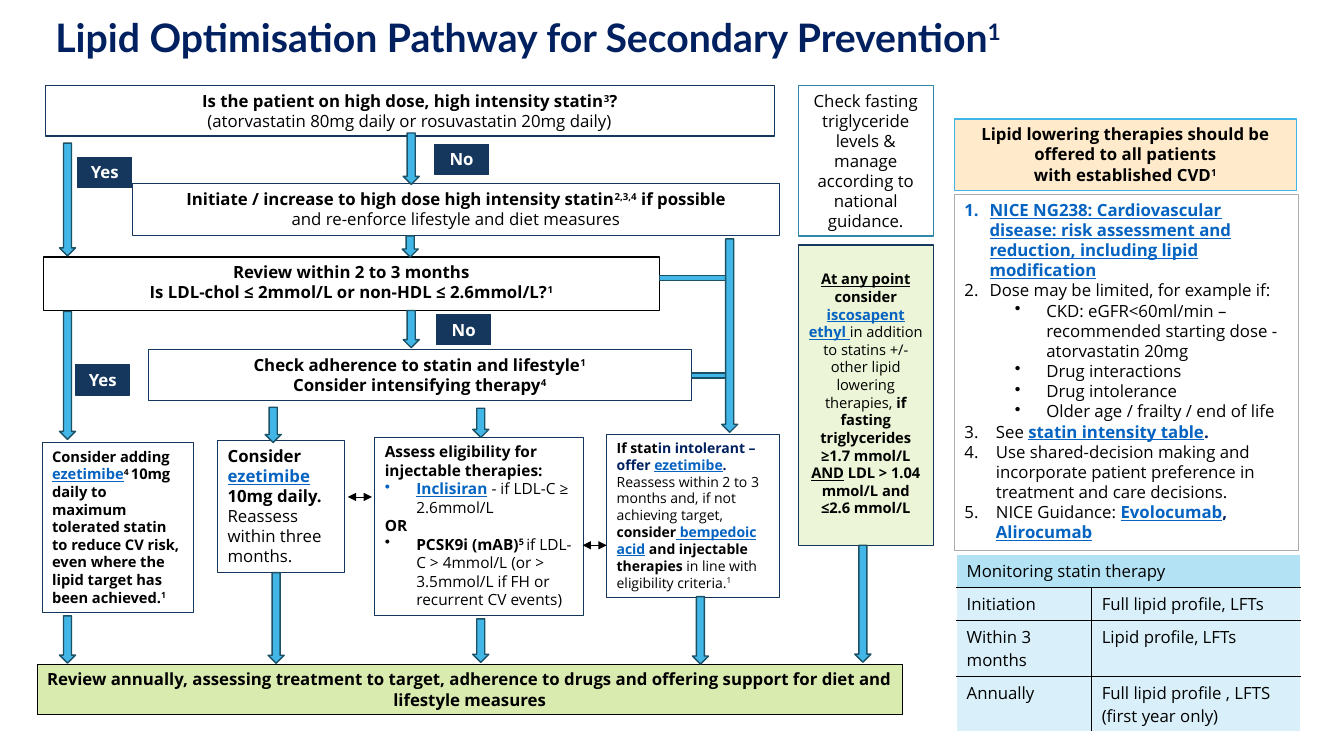
from lxml import etree
from pptx import Presentation
from pptx.dml.color import RGBColor
from pptx.enum import shapes, text
from pptx.oxml import ns
from pptx.util import Pt

NAVY = RGBColor(0x15, 0x37, 0x5D)
TITLE_NAVY = RGBColor(0x00, 0x20, 0x60)
LINK_BLUE = RGBColor(0x05, 0x63, 0xC1)
ARROW_BLUE = RGBColor(0x42, 0xB6, 0xE6)
ARROW_EDGE = RGBColor(0x1C, 0x50, 0x65)
CHECK_EDGE = RGBColor(0x30, 0x87, 0xAA)
CREAM = RGBColor(0xFF, 0xEB, 0xCC)
CREAM_EDGE = RGBColor(0x41, 0xB6, 0xE6)
LIME = RGBColor(0xA3, 0xCD, 0x38)
GREY = RGBColor(0xAF, 0xAB, 0xAB)
HEADER_BLUE = RGBColor(0xB3, 0xE2, 0xF5)
ROW_BLUE = RGBColor(0xD9, 0xF0, 0xFA)
BLACK = RGBColor(0, 0, 0)
WHITE = RGBColor(0xFF, 0xFF, 0xFF)

PLAIN = {"bold": False}
BOLD = {"bold": True}
STRONG = {"bold": True, "underline": True}
LINK = {**STRONG, "color": LINK_BLUE}
DARK = {**BOLD, "color": TITLE_NAVY}
LABEL = {**BOLD, "color": WHITE}
SUP = {**BOLD, "raised": True}
PLAIN_SUP = {**PLAIN, "raised": True}

DOT = ("a:buChar", "char", "•")
NUMBER = ("a:buAutoNum", "type", "arabicPeriod")
CENTER, LEFT = text.PP_ALIGN.CENTER, text.PP_ALIGN.LEFT
TOP, MIDDLE = text.MSO_ANCHOR.TOP, text.MSO_ANCHOR.MIDDLE
RECT = shapes.MSO_SHAPE.RECTANGLE
DOWN = shapes.MSO_SHAPE.DOWN_ARROW


def sub(parent, tag, **attributes):
    return etree.SubElement(parent, ns.qn(tag), **attributes)


def add_runs(paragraph, runs, size, font="Open Sans"):
    for words, style in runs:
        run = paragraph.add_run()
        run.text = words
        values = {"name": font, "size": Pt(size), **style}
        run.font.color.rgb = values.pop("color", BLACK)
        if values.pop("raised", False):
            run.font._element.set("baseline", "30000")
        for name, value in values.items():
            setattr(run.font, name, value)


def add_bullet(paragraph, bullet, indent, hanging, level=0):
    paragraph.level = level
    properties = paragraph._p.get_or_add_pPr()
    properties.set("marL", str(Pt(indent)))
    properties.set("indent", str(-Pt(hanging)))
    tag, attribute, value = bullet
    sub(properties, tag, **{attribute: value})


def add_block(slide, kind, place, fill=None, edge=None, width=0.75, opacity=None):
    block = slide.shapes.add_shape(kind, *map(Pt, place))
    block.shadow.inherit = False
    if fill is None:
        block.fill.background()
    else:
        block.fill.solid()
        block.fill.fore_color.rgb = fill
    if opacity:
        color = block._element.spPr.find(ns.qn("a:solidFill"))[0]
        sub(color, "a:alpha", val=str(opacity * 1000))
    if edge is None:
        block.line.fill.background()
    else:
        block.line.color.rgb = edge
        block.line.width = Pt(width)
    return block


def add_box(slide, place, paragraphs, size=12, align=CENTER, anchor=TOP,
            top=3.6, edge=NAVY, **look):
    """Each paragraph is a list of runs, or a pair of runs and bullet settings."""
    frame = add_block(slide, RECT, place, edge=edge, **look).text_frame
    frame.word_wrap = True
    frame.vertical_anchor = anchor
    frame.margin_top = Pt(top)
    for index, content in enumerate(paragraphs):
        runs, bullet = content if isinstance(content, tuple) else (content, None)
        paragraph = frame.add_paragraph() if index else frame.paragraphs[0]
        if bullet:
            add_bullet(paragraph, *bullet)
        paragraph.alignment = align
        add_runs(paragraph, runs, size)


def add_double_arrow(slide, left, right, y):
    line = slide.shapes.add_connector(
        shapes.MSO_CONNECTOR.STRAIGHT, Pt(left), Pt(y), Pt(right), Pt(y))
    line.line.color.rgb = BLACK
    line.line.width = Pt(0.5)
    outline = line.line._get_or_add_ln()
    for end in ("a:headEnd", "a:tailEnd"):
        sub(outline, end, type="triangle")
    sub(line._element.spPr, "a:effectLst")


def add_border(cell, side):
    border = sub(cell._tc.get_or_add_tcPr(), f"a:{side}", w=str(Pt(1)))
    sub(sub(border, "a:solidFill"), "a:srgbClr", val=str(BLACK))


def add_monitoring_table(slide):
    rows = [("Monitoring statin therapy", ""),
            ("Initiation", "Full lipid profile, LFTs"),
            ("Within 3 months", "Lipid profile, LFTs"),
            ("Annually", "Full lipid profile , LFTS (first year only)")]
    table = slide.shapes.add_table(4, 2, *map(Pt, (683.3, 396, 245.5, 115.2))).table
    for column, width in zip(table.columns, (96.5, 149)):
        column.width = Pt(width)
    for r, (row, height) in enumerate(zip(rows, (21.4, 21.4, 36.2, 36.2))):
        table.rows[r].height = Pt(height)
        for c, words in enumerate(row):
            cell = table.cell(r, c)
            if r and c:
                add_border(cell, "lnL")
            if r and not c:
                add_border(cell, "lnR")
            if r:
                add_border(cell, "lnT")
            if r < len(rows) - 1:
                add_border(cell, "lnB")
            cell.fill.solid()
            cell.fill.fore_color.rgb = ROW_BLUE if r else HEADER_BLUE
            if words:
                add_runs(cell.text_frame.paragraphs[0], [(words, PLAIN)], 12)
    table.cell(0, 0).merge(table.cell(0, 1))


def add_title(slide):
    title = slide.shapes.title
    place = {"left": 32.4, "top": 10.8, "width": 889.9, "height": 34.6}
    for name, value in place.items():
        setattr(title, name, Pt(value))
    title.text_frame.vertical_anchor = MIDDLE
    heading = title.text_frame.paragraphs[0]
    heading.alignment = LEFT
    heading.line_spacing = 0.9
    add_runs(heading, [("Lipid Optimisation\u00a0Pathway for Secondary Prevention".replace("\u00a0", " "), DARK),
                       ("1", {**DARK, "raised": True})], 28, "Lato")


def add_questions(slide):
    add_box(slide, (32.4, 61.2, 520.6, 36), [
        [("Is the patient on high dose, high intensity statin", BOLD), ("3", SUP), ("?", BOLD)],
        [("(atorvastatin 80mg daily or rosuvastatin 20mg daily)", PLAIN)]])
    add_box(slide, (95, 131, 461.5, 37.4), [
        [("Initiate / increase to high dose high intensity statin", BOLD), ("2,3,4", SUP),
         (" if possible", BOLD)],
        [("and re-enforce lifestyle and diet measures", PLAIN)]])
    add_box(slide, (31, 183.6, 440, 38.2), [
        [("Review within 2 to 3 months", BOLD)],
        [("Is LDL-chol ≤ 2mmol/L or non-HDL ≤ 2.6mmol/L?", BOLD), ("1", SUP)]],
        fill=WHITE, edge=BLACK)
    add_box(slide, (105.8, 249.8, 388.1, 36), [
        [("Check adherence to statin and lifestyle", BOLD), ("1", SUP)],
        [("Consider intensifying therapy", BOLD), ("4", SUP)]])
    for left, top, answer in ((310.3, 103, "No"), (311.8, 224.6, "No"),
                              (55.4, 112.3, "Yes"), (54, 260.6, "Yes")):
        add_box(slide, (left, top, 38.9, 21.6), [[(answer, LABEL)]], fill=NAVY)


def add_treatments(slide):
    add_box(slide, (30.2, 316.1, 108, 121.7), [
        [("Consider adding ", BOLD), ("ezetimibe", LINK), ("4 ", SUP),
         ("10mg daily to maximum tolerated statin to reduce CV risk, even where "
          "the lipid target has been achieved.", BOLD), ("1", SUP)]], 10.5, LEFT)
    add_box(slide, (155.5, 314.6, 90.7, 94.3), [
        [("Consider ", BOLD), ("ezetimibe", LINK), (" ", SUP), ("10mg daily.", BOLD)],
        [("Reassess within three months.", PLAIN)]], align=LEFT)
    bullet = (DOT, 22.5, 22.5)
    add_box(slide, (267.8, 312.5, 149, 127.4), [
        [("Assess eligibility for injectable therapies:", BOLD)],
        ([("Inclisiran", LINK), (" - if LDL-C ≥ 2.6mmol/L", PLAIN)], bullet),
        [("OR", BOLD)],
        ([("PCSK9i (mAB)", BOLD), ("5 ", SUP),
          ("if LDL-C > 4mmol/L (or > 3.5mmol/L if FH or recurrent CV events)", PLAIN)],
         bullet)], 11, LEFT)
    add_box(slide, (433.4, 310.3, 123.1, 116.6), [
        [("If stat", BOLD), ("in intolerant – offer ", DARK), ("ezetimibe", LINK), (". ", DARK),
         ("Reassess within 2 to 3 months and, if not achieving target, ", PLAIN),
         ("consider", BOLD), (" bempedoic acid", LINK), (" and injectable therapies ", BOLD),
         ("in line with eligibility criteria.", PLAIN), ("1", PLAIN_SUP)]], 10, LEFT)
    add_box(slide, (26.6, 474.5, 617.8, 36), [
        [("Review annually, assessing treatment to target, adherence to drugs and offering "
          "support for diet and lifestyle measures", BOLD)]],
        fill=LIME, opacity=40, edge=BLACK)


def add_triglycerides(slide):
    add_box(slide, (570.2, 61.2, 96.5, 107.3), [
        [("Check fasting triglyceride levels & manage according to national guidance.", PLAIN)]],
        anchor=MIDDLE, fill=WHITE, edge=CHECK_EDGE, width=1)
    add_box(slide, (570.2, 175, 96.5, 214.6), [
        [("At any point ", STRONG), ("consider ", BOLD), ("iscosapent ethyl ", LINK),
         ("in addition to statins +/- other lipid lowering therapies, ", PLAIN),
         ("if fasting", BOLD)],
        [("triglycerides ≥1.7 mmol/L ", BOLD), ("AND", STRONG),
         (" LDL > 1.04 mmol/L and ≤2.6 mmol/L", BOLD)]],
        10.5, top=18, fill=LIME, opacity=20)


def add_guidance(slide):
    add_box(slide, (681.8, 85, 244.1, 51.1), [
        [("Lipid lowering therapies should be offered to all patients", BOLD)],
        [("with established CVD", BOLD), ("1", SUP)]], fill=CREAM, edge=CREAM_EDGE)
    near, far, inner = (NUMBER, 18, 18), (NUMBER, 22.5, 22.5), (DOT, 58.5, 22.5, 1)
    limits = ("CKD: eGFR<60ml/min – recommended starting dose - atorvastatin 20mg",
              "Drug interactions", "Drug intolerance", "Older age / frailty / end of life")
    add_box(slide, (681.8, 139, 245.5, 254.2), [
        ([("NICE NG238: Cardiovascular disease: risk assessment and reduction, "
           "including lipid modification", LINK)], near),
        ([("Dose may be limited, for example if:", PLAIN)], near),
        *[([(limit, PLAIN)], inner) for limit in limits],
        ([("See ", PLAIN), ("statin intensity table", LINK), (".", DARK)], far),
        ([("Use shared-decision making and incorporate patient preference in treatment "
           "and care decisions.", PLAIN)], far),
        ([("NICE Guidance: ", PLAIN), ("Evolocumab", LINK), (", ", DARK),
          ("Alirocumab", LINK)], far)], align=LEFT, edge=GREY)


def add_flow(slide):
    for place in ((470.9, 196.6, 49.7, 3.6), (493.9, 266.4, 26.6, 3.6)):
        add_block(slide, RECT, place, ARROW_BLUE, ARROW_EDGE, 1)
    for left, top, height in (
            (288, 95, 36.7), (287.3, 168.5, 15.1), (337.7, 291.6, 20.9), (42.5, 102.2, 80.6),
            (42.5, 222.5, 91.4), (288, 221.8, 26.6), (189.4, 290.9, 25.2), (42.5, 439.9, 33.8),
            (337.7, 442.1, 31), (610.6, 389.5, 83.5), (515.5, 170.6, 138.2),
            (191.5, 409, 64.8), (494.6, 426.2, 48.2)):
        add_block(slide, DOWN, (left, top, 11.5, height), ARROW_BLUE, ARROW_EDGE, 1)
    add_double_arrow(slide, 416.2, 433.4, 389.5)
    add_double_arrow(slide, 248.4, 265.7, 355)


def main():
    deck = Presentation()
    deck.slide_width, deck.slide_height = Pt(960), Pt(540)
    slide = deck.slides.add_slide(deck.slide_layouts[5])
    for add_part in (add_title, add_questions, add_treatments, add_triglycerides,
                     add_guidance, add_flow, add_monitoring_table):
        add_part(slide)
    deck.save("out.pptx")


if __name__ == "__main__":
    main()
